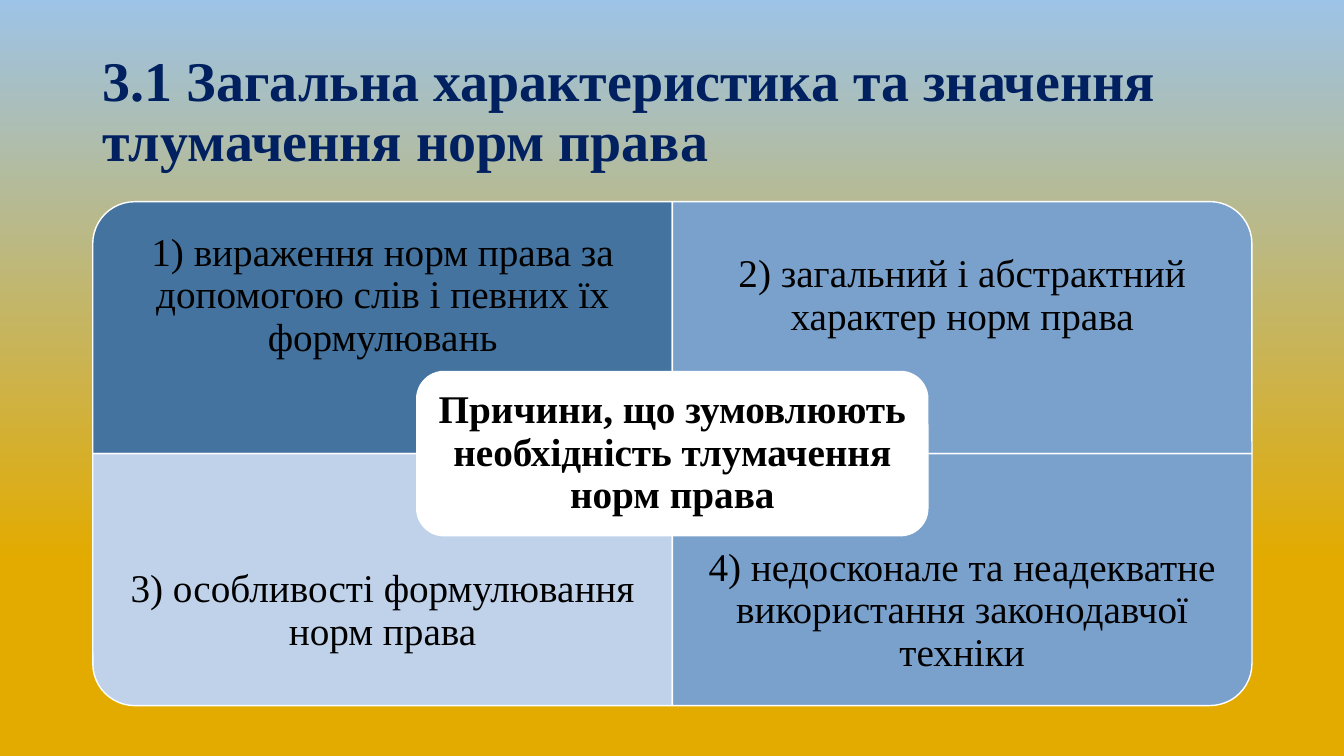
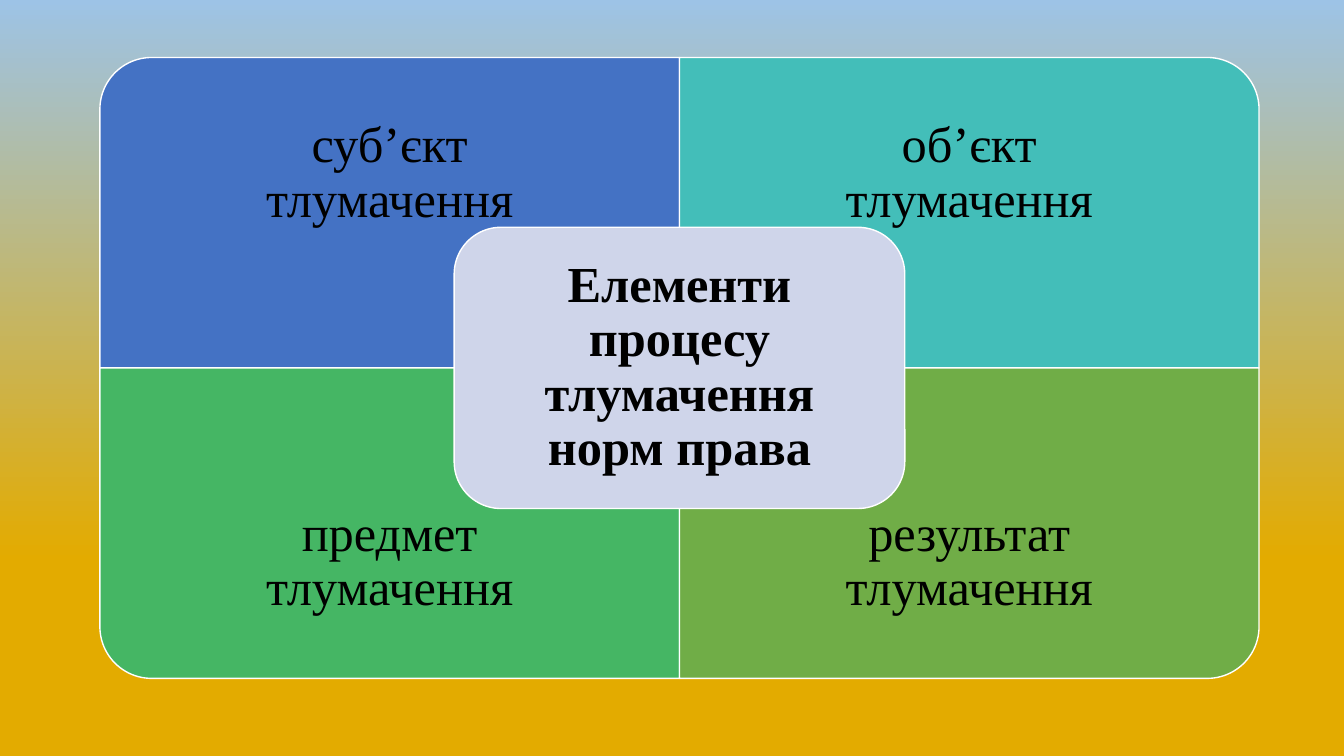
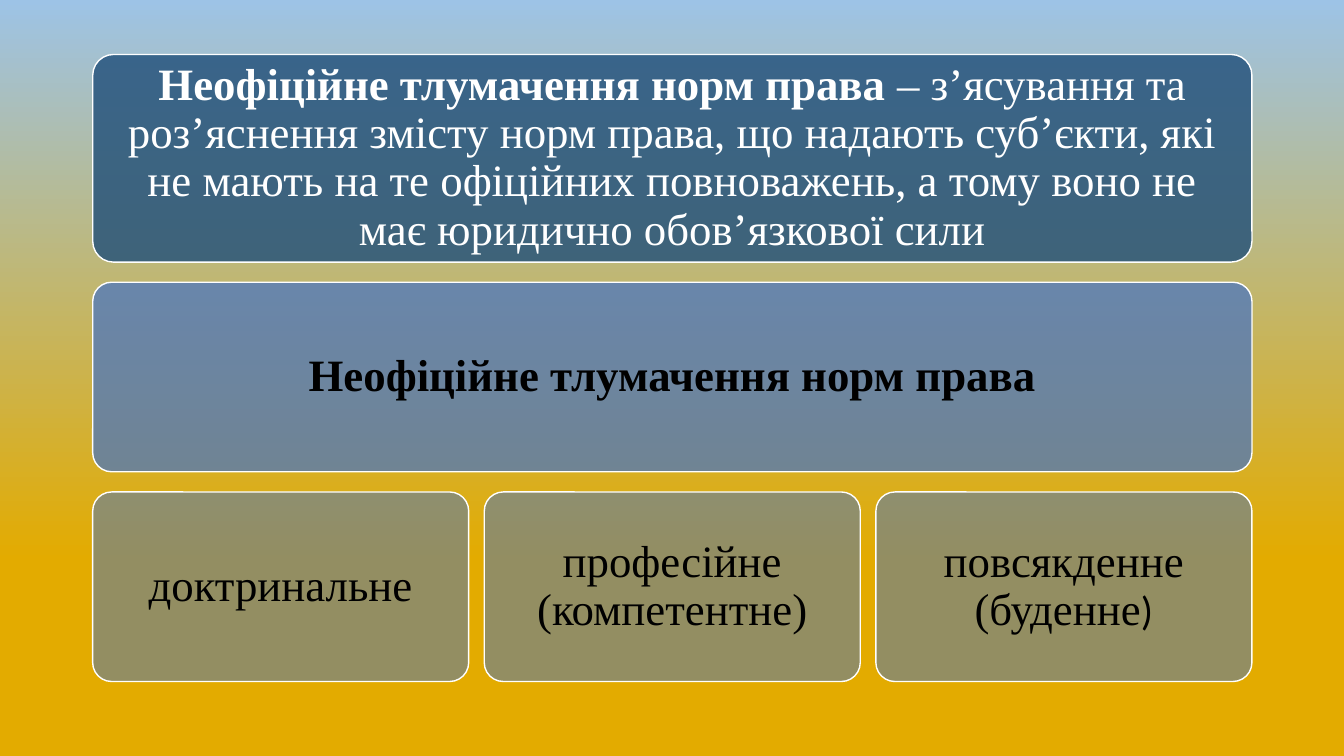
import pptx
import pptx.util
import lxml.etree
from pptx.dml.color import RGBColor
from pptx.enum.shapes import MSO_SHAPE
from pptx.enum.text import MSO_ANCHOR, MSO_AUTO_SIZE, PP_ALIGN
from pptx.oxml.ns import qn


class Theme:
    font = "Times New Roman"
    bracket_font = "Calibri"
    amber = "E3AB00"
    sky = "9DC3E6"
    navy = "002060"
    black = "000000"
    white = "FFFFFF"
    steel = "43739E"
    mid_blue = "7AA1CC"
    pale_blue = "C0D2EA"
    blue = "4472C4"
    teal = "43BEB9"
    green = "45B664"
    olive = "70AD47"
    lavender = "CFD5EA"
    deep_blue = "1F4E79"
    title_size = 40
    reasons_size = 28
    elements_size = 36
    types_size = 32
    bracket_size = 29
    line_spacing = 0.9


deck = pptx.Presentation()
deck.slide_width = pptx.util.Inches(13.33)
deck.slide_height = pptx.util.Inches(7.5)
column = deck.slide_width / 100
row = deck.slide_height / 100
title_only, blank = deck.slide_layouts[5], deck.slide_layouts[6]

backdrop = deck.slide_master.background.fill
backdrop.gradient()
backdrop.gradient_angle = 90
for stop, position, color in zip(
    backdrop.gradient_stops, (0.26, 1), (Theme.amber, Theme.sky)
):
    stop.position = position
    stop.color.rgb = RGBColor.from_string(color)


def write(shape, text, size, color=Theme.black, bold=False, inset=0.1, align=PP_ALIGN.CENTER):
    frame = shape.text_frame
    frame.word_wrap = True
    frame.auto_size = MSO_AUTO_SIZE.NONE
    frame.vertical_anchor = MSO_ANCHOR.MIDDLE
    frame.margin_left = frame.margin_right = pptx.util.Inches(inset)
    frame.margin_top = frame.margin_bottom = pptx.util.Inches(inset)
    para = frame.paragraphs[0]
    para.text = text
    para.alignment = align
    para.line_spacing = Theme.line_spacing
    for span in para.runs:
        span.font.name = Theme.font
        span.font.size = pptx.util.Pt(size)
        span.font.bold = bold
        span.font.color.rgb = RGBColor.from_string(color)
    return para


def add_block(page, kind, box, fill, turn=0, opacity=100):
    left, top = box[0] * column, box[1] * row
    width, height = box[2] * column, box[3] * row
    if turn % 180:
        left += (width - height) / 2
        top += (height - width) / 2
        width, height = height, width
    shape = page.shapes.add_shape(kind, int(left), int(top), int(width), int(height))
    shape.rotation = turn
    shape.shadow.inherit = False
    shape.fill.solid()
    shape.fill.fore_color.rgb = RGBColor.from_string(fill)
    if opacity < 100:
        tint = shape.element.spPr.find(".//" + qn("a:srgbClr"))
        lxml.etree.SubElement(tint, qn("a:alpha"), val=str(opacity * 1000))
    shape.line.color.rgb = RGBColor.from_string(Theme.white)
    shape.line.width = pptx.util.Pt(1)
    return shape


reasons = deck.slides.add_slide(title_only)
title = reasons.shapes.title
title.left, title.top = int(6.9 * column), int(5.33 * row)
title.width, title.height = int(86.25 * column), int(19.33 * row)
write(
    title,
    "3.1 Загальна характеристика та значення тлумачення норм права",
    Theme.title_size,
    Theme.navy,
    bold=True,
    align=PP_ALIGN.LEFT,
)
elements = deck.slides.add_slide(blank)

matrices = [
    {
        "page": reasons,
        "area": (6.9, 26.67, 86.25, 66.67),
        "size": Theme.reasons_size,
        "inset": 0.22,
        "quarters": [
            ("1) вираження норм права за допомогою слів і певних їх формулювань", Theme.steel),
            ("2) загальний і абстрактний характер норм права", Theme.mid_blue),
            ("3) особливості формулювання норм права", Theme.pale_blue),
            ("4) недосконале та неадекватне використання законодавчої техніки", Theme.mid_blue),
        ],
        "hub": ("Причини, що зумовлюють необхідність тлумачення норм права", Theme.white),
        "hub_size": (38.03, 21.73),
        "hub_inset": 0.12,
    },
    {
        "page": elements,
        "area": (7.43, 7.6, 86.25, 82.13),
        "size": Theme.elements_size,
        "inset": 0.28,
        "quarters": [
            ("суб’єкт\nтлумачення", Theme.blue),
            ("об’єкт\nтлумачення", Theme.teal),
            ("предмет\nтлумачення", Theme.green),
            ("результат\nтлумачення", Theme.olive),
        ],
        "hub": ("Елементи процесу тлумачення норм права", Theme.lavender),
        "hub_size": (33.53, 37.2),
        "hub_inset": 0.15,
    },
]

for matrix in matrices:
    page = matrix["page"]
    left, top, width, height = matrix["area"]
    half_width, half_height = width / 2, height / 2
    for index, (text, fill) in enumerate(matrix["quarters"]):
        down, across = divmod(index, 2)
        x, y = left + across * half_width, top + down * half_height
        turn = (270, 0, 180, 90)[index]
        add_block(page, MSO_SHAPE.ROUND_1_RECTANGLE, (x, y, half_width, half_height), fill, turn)
        label = page.shapes.add_textbox(
            int(x * column),
            int((y + down * half_height / 4) * row),
            int(half_width * column),
            int(half_height * 0.75 * row),
        )
        write(label, text, matrix["size"], inset=matrix["inset"])
    hub_width, hub_height = matrix["hub_size"]
    hub_text, hub_fill = matrix["hub"]
    hub_box = (
        left + half_width - hub_width / 2,
        top + half_height - hub_height / 2,
        hub_width,
        hub_height,
    )
    hub = add_block(page, MSO_SHAPE.ROUNDED_RECTANGLE, hub_box, hub_fill)
    write(hub, hub_text, matrix["size"], bold=True, inset=matrix["hub_inset"])

unofficial = deck.slides.add_slide(blank)
left, width = 6.9, 86.25
column_gap, row_gap = 1.16, 2.67
definition_top, definition_height, tier_height = 7.2, 27.47, 25.07
heading_top = definition_top + definition_height + row_gap
types_top = heading_top + tier_height + row_gap
type_width = (width - 2 * column_gap) / 3

tiers = [
    ("Неофіційне тлумачення норм права ", (left, definition_top, width, definition_height),
     Theme.deep_blue, 80, Theme.white, True),
    ("Неофіційне тлумачення норм права", (left, heading_top, width, tier_height),
     Theme.blue, 70, Theme.black, True),
]
for index, text in enumerate(("доктринальне", "професійне (компетентне)", "повсякденне (буденне")):
    x = left + index * (type_width + column_gap)
    tiers.append((text, (x, types_top, type_width, tier_height), Theme.blue, 50, Theme.black, False))

paras = []
for text, box, fill, opacity, color, bold in tiers:
    card = add_block(unofficial, MSO_SHAPE.ROUNDED_RECTANGLE, box, fill, opacity=opacity)
    card.adjustments[0] = 0.1
    paras.append(write(card, text, Theme.types_size, color, bold, inset=0.13))

endings = [
    (paras[0],
     "– з’ясування та роз’яснення змісту норм права, що надають суб’єкти, які не мають на те "
     "офіційних повноважень, а тому воно не має юридично обов’язкової сили",
     Theme.font, Theme.types_size, Theme.white),
    (paras[-1], ")", Theme.bracket_font, Theme.bracket_size, Theme.black),
]
for para, text, font, size, color in endings:
    span = para.add_run()
    span.text = text
    span.font.name = font
    span.font.size = pptx.util.Pt(size)
    span.font.bold = False
    span.font.color.rgb = RGBColor.from_string(color)

deck.save("out.pptx")
